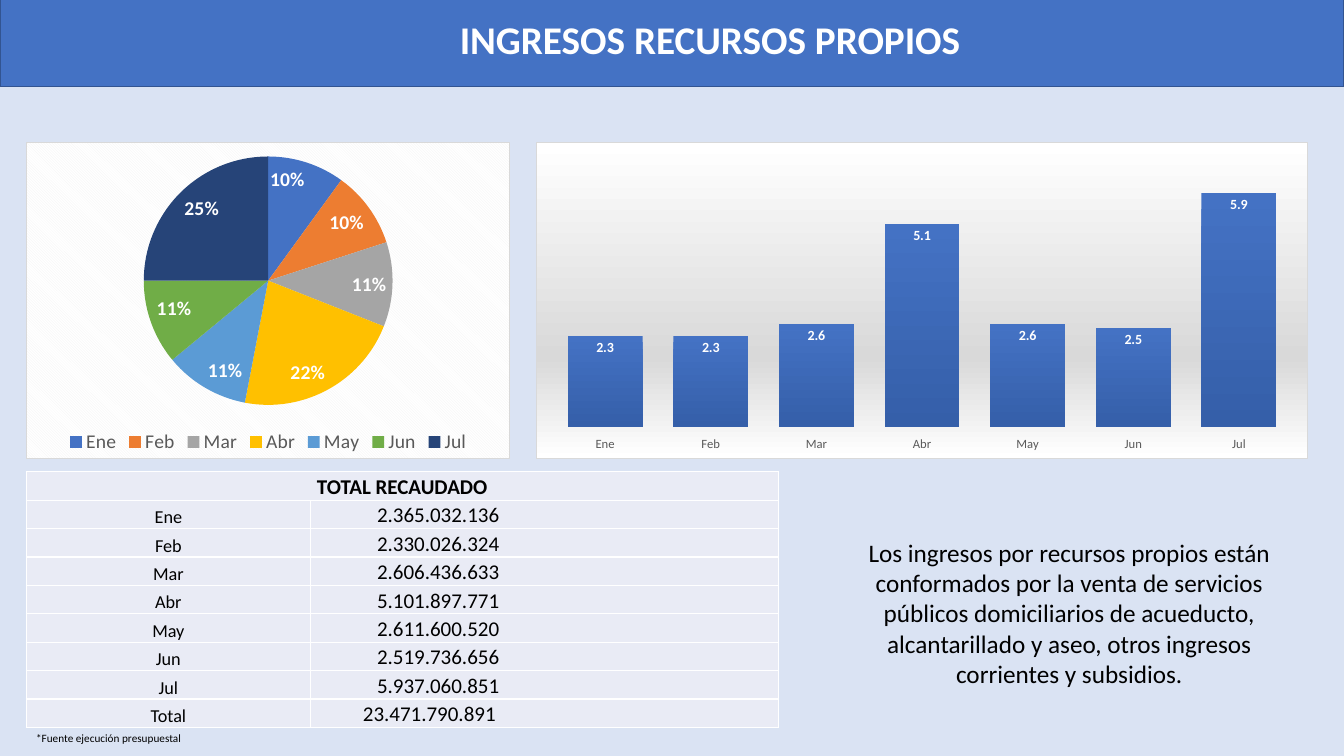
from pptx import Presentation
from pptx.chart.data import CategoryChartData
from pptx.dml.color import RGBColor
from pptx.enum.chart import XL_CHART_TYPE, XL_LABEL_POSITION, XL_LEGEND_POSITION, XL_TICK_LABEL_POSITION, XL_TICK_MARK
from pptx.enum.shapes import MSO_SHAPE
from pptx.enum.text import MSO_ANCHOR, PP_ALIGN
from pptx.oxml import parse_xml
from pptx.util import Inches, Pt

PIE, COLUMN = XL_CHART_TYPE.PIE, XL_CHART_TYPE.COLUMN_CLUSTERED
INSIDE_END = XL_LABEL_POSITION.INSIDE_END
LEGEND_BOTTOM = XL_LEGEND_POSITION.BOTTOM
LABELS_LOW, TICK_NONE = XL_TICK_LABEL_POSITION.LOW, XL_TICK_MARK.NONE
LEFT, CENTER = PP_ALIGN.LEFT, PP_ALIGN.CENTER
TOP, MIDDLE, BOTTOM = MSO_ANCHOR.TOP, MSO_ANCHOR.MIDDLE, MSO_ANCHOR.BOTTOM
RECTANGLE = MSO_SHAPE.RECTANGLE

FONT = "Calibri"
WHITE, BLACK, GRAY, BLUE = "FFFFFF", "000000", "595959", "4472C4"
TITLE = "INGRESOS RECURSOS PROPIOS"
DESCRIPTION = (
    "Los ingresos por recursos propios están conformados por la venta de servicios "
    "públicos domiciliarios de acueducto, alcantarillado y aseo, otros ingresos "
    "corrientes y subsidios."
)
SOURCE_NOTE = "*Fuente ejecución presupuestal"
TABLE_TITLE = "TOTAL RECAUDADO"
MONTHS = [
    ("Ene", 10, 2.3, "2.365.032.136", BLUE),
    ("Feb", 10, 2.3, "2.330.026.324", "ED7D31"),
    ("Mar", 11, 2.6, "2.606.436.633", "A5A5A5"),
    ("Abr", 22, 5.1, "5.101.897.771", "FFC000"),
    ("May", 11, 2.6, "2.611.600.520", "5B9BD5"),
    ("Jun", 11, 2.5, "2.519.736.656", "70AD47"),
    ("Jul", 25, 5.9, "5.937.060.851", "264478"),
]
TOTAL = ("Total", "23.471.790.891")
NAMES, SHARES, MILLIONS, AMOUNTS, PIE_COLORS = zip(*MONTHS)

PIE_BOX = (0.26, 1.41, 4.8, 3.14)
COLUMN_BOX = (5.32, 1.41, 7.65, 3.14)
TABLE_BOX = (0.26, 4.68, 7.46, 2.54)
TABLE_COLUMNS = (2.82, 4.64)
AMOUNT_INDENT, TOTAL_INDENT = 0.66, 0.52

DRAWING = "http://schemas.openxmlformats.org/drawingml/2006/main"
CHART = "http://schemas.openxmlformats.org/drawingml/2006/chart"
PIE_BACKGROUND = (
    '<a:pattFill prst="dkDnDiag"><a:fgClr><a:srgbClr val="F2F2F2"/></a:fgClr>'
    '<a:bgClr><a:srgbClr val="FFFFFF"/></a:bgClr></a:pattFill>'
)
COLUMN_BACKGROUND = (
    '<a:gradFill><a:gsLst><a:gs pos="0"><a:srgbClr val="FFFFFF"/></a:gs>'
    '<a:gs pos="68000"><a:srgbClr val="D9D9D9"/></a:gs>'
    '<a:gs pos="100000"><a:srgbClr val="FFFFFF"/></a:gs></a:gsLst>'
    '<a:lin ang="5400000" scaled="0"/></a:gradFill>'
)


def color(value):
    return RGBColor.from_string(value)


def paint(fill, value):
    fill.solid()
    fill.fore_color.rgb = color(value)


def style_font(font, size, value, bold=False):
    font.name, font.size, font.bold = FONT, Pt(size), bold
    font.color.rgb = color(value)


def write(frame, text, size, value=BLACK, bold=False, align=LEFT):
    frame.text = text
    paragraph = frame.paragraphs[0]
    paragraph.alignment = align
    style_font(paragraph.font, size, value, bold)


def add_text(slide, box, text, size, align=LEFT):
    frame = slide.shapes.add_textbox(*map(Inches, box)).text_frame
    frame.word_wrap = True
    write(frame, text, size, align=align)


def add_header(slide):
    band = slide.shapes.add_shape(RECTANGLE, *map(Inches, (0, -0.24, 13.33, 1.1)))
    band.shadow.inherit = False
    paint(band.fill, BLUE)
    band.line.color.rgb = color("325491")
    band.line.width = Pt(1)
    title = slide.shapes.title
    title.element.addprevious(band.element)
    title.left, title.top, title.width, title.height = map(Inches, (4.46, 0.1, 6.63, 0.57))
    title.text_frame.vertical_anchor = TOP
    write(title.text_frame, TITLE, 28, WHITE, True)


def add_chart(slide, kind, box, values, background, label_size, label_format):
    data = CategoryChartData()
    data.categories = NAMES
    data.add_series("Series 1", values)
    chart = slide.shapes.add_chart(kind, *map(Inches, box), data).chart
    chart.has_title = chart.has_legend = False
    style_font(chart.font, 10, BLACK)
    chart.element.chart.addnext(parse_xml(
        f'<c:spPr xmlns:c="{CHART}" xmlns:a="{DRAWING}">{background}'
        '<a:ln w="9525"><a:solidFill><a:srgbClr val="D9D9D9"/></a:solidFill></a:ln></c:spPr>'
    ))
    plot = chart.plots[0]
    plot.has_data_labels = True
    labels = plot.data_labels
    labels.show_percentage, labels.show_value = kind == PIE, kind != PIE
    labels.position = INSIDE_END
    labels.number_format, labels.number_format_is_linked = label_format, False
    style_font(labels.font, label_size, WHITE, True)
    return chart


def add_pie(slide):
    chart = add_chart(slide, PIE, PIE_BOX, SHARES, PIE_BACKGROUND, 14, "0%")
    for index, value in enumerate(PIE_COLORS):
        paint(chart.series[0].points[index].format.fill, value)
    chart.has_legend = True
    chart.legend.position = LEGEND_BOTTOM
    chart.legend.include_in_layout = False
    style_font(chart.legend.font, 14, GRAY)


def add_columns(slide):
    chart = add_chart(slide, COLUMN, COLUMN_BOX, MILLIONS, COLUMN_BACKGROUND, 10, "0.0")
    plot = chart.plots[0]
    plot.gap_width, plot.vary_by_categories = 41, False
    fill = plot.series[0].format.fill
    fill.gradient()
    fill.gradient_angle = 270
    for stop, value in zip(fill.gradient_stops, (BLUE, "355FA9")):
        stop.color.rgb = color(value)
    months, amounts = chart.category_axis, chart.value_axis
    months.major_tick_mark = TICK_NONE
    months.tick_label_position = LABELS_LOW
    months.format.line.fill.background()
    style_font(months.tick_labels.font, 9, GRAY)
    amounts.minimum_scale, amounts.maximum_scale = 0, 7
    amounts.has_major_gridlines = amounts.visible = False


def fill_cell(cell, text, size, bold=False, align=CENTER, indent=0):
    cell.margin_left = Inches(indent)
    cell.margin_top = cell.margin_right = cell.margin_bottom = 0
    cell.vertical_anchor = BOTTOM
    write(cell.text_frame, text, size, BLACK, bold, align)
    properties = cell._tc.get_or_add_tcPr()
    for side in ("lnL", "lnR", "lnT", "lnB"):
        properties.append(parse_xml(
            f'<a:{side} xmlns:a="{DRAWING}" w="12700"><a:solidFill>'
            f'<a:srgbClr val="{WHITE}"/></a:solidFill></a:{side}>'
        ))
    paint(cell.fill, "E9EBF5")


def add_income_table(slide):
    rows = [*zip(NAMES, AMOUNTS), TOTAL]
    table = slide.shapes.add_table(len(rows) + 1, 2, *map(Inches, TABLE_BOX)).table
    for column, width in zip(table.columns, TABLE_COLUMNS):
        column.width = Inches(width)
    fill_cell(table.cell(0, 0), TABLE_TITLE, 15, bold=True)
    fill_cell(table.cell(0, 1), "", 15)
    table.cell(0, 0).merge(table.cell(0, 1))
    for index, (name, amount) in enumerate(rows, 1):
        indent = TOTAL_INDENT if name == TOTAL[0] else AMOUNT_INDENT
        fill_cell(table.cell(index, 0), name, 13)
        fill_cell(table.cell(index, 1), amount, 15, align=LEFT, indent=indent)


def main():
    presentation = Presentation()
    presentation.slide_width, presentation.slide_height = Inches(13.33), Inches(7.5)
    slide = presentation.slides.add_slide(presentation.slide_layouts[5])
    paint(slide.background.fill, "DAE3F3")
    add_header(slide)
    add_pie(slide)
    add_columns(slide)
    add_income_table(slide)
    add_text(slide, (8.38, 5.28, 4.45, 1.62), DESCRIPTION, 18, CENTER)
    add_text(slide, (0.26, 7.21, 1.66, 0.24), SOURCE_NOTE, 8)
    presentation.save("out.pptx")


if __name__ == "__main__":
    main()
